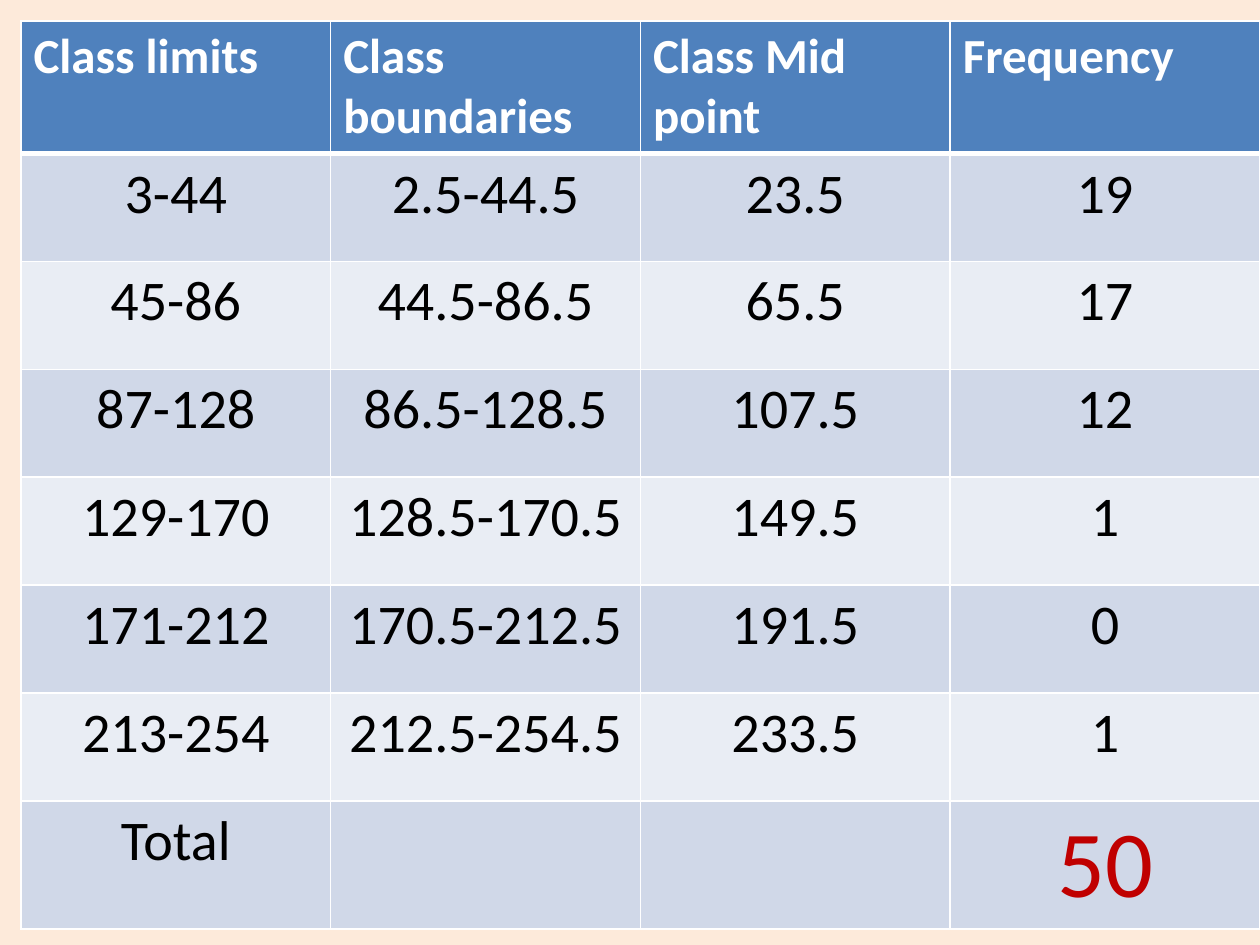
import pptx
import pptx.util
import pptx.dml.color
import pptx.enum.text
import pptx.oxml
import pptx.oxml.ns
from pptx.util import Pt

HEADER = ["Class limits", "Class boundaries", "Class Mid point", "Frequency"]
CLASSES = [
    ["3-44", "2.5-44.5", "23.5", "19"],
    ["45-86", "44.5-86.5", "65.5", "17"],
    ["87-128", "86.5-128.5", "107.5", "12"],
    ["129-170", "128.5-170.5", "149.5", "1"],
    ["171-212", "170.5-212.5", "191.5", "0"],
    ["213-254", "212.5-254.5", "233.5", "1"],
]
TOTAL = ["Total", "", "", "50"]


def rgb(value):
    return pptx.dml.color.RGBColor.from_string(value)


class Deck:
    font = "Calibri"
    white, black, red = "FFFFFF", "000000", "C00000"
    header_fill = "4F81BD"
    bands = ("D0D8E8", "E9EDF4")

    def __init__(self, width, height):
        self.prs = pptx.Presentation()
        self.prs.slide_width, self.prs.slide_height = Pt(width), Pt(height)

    def slide(self, background):
        self.s = self.prs.slides.add_slide(self.prs.slide_layouts[6])
        fill = self.s.background.fill
        fill.solid()
        fill.fore_color.rgb = rgb(background)

    def borders(self, cell, **widths):
        # Border lines come before the fill in the cell properties
        tc_pr = cell._tc.get_or_add_tcPr()
        for i, side in enumerate("LRTB"):
            tc_pr.insert(i, pptx.oxml.parse_xml(
                f'<a:ln{side} {pptx.oxml.ns.nsdecls("a")} w="{Pt(widths.get(side, 1))}">'
                f'<a:solidFill><a:srgbClr val="{self.white}"/></a:solidFill></a:ln{side}>'))

    def text(self, cell, text, size, color, bold, align):
        p = cell.text_frame.paragraphs[0]
        p.alignment = align
        r = p.add_run()
        r.text = text
        r.font.name, r.font.size, r.font.bold = self.font, Pt(size), bold
        r.font.color.rgb = rgb(color)

    def table(self, x, y, col_width, row_heights, rows):
        n_rows, n_cols = len(rows), len(rows[0])
        sp = self.s.shapes.add_table(n_rows, n_cols, Pt(x), Pt(y),
                                     Pt(col_width * n_cols), Pt(sum(row_heights)))
        table = sp.table
        for col in table.columns:
            col.width = Pt(col_width)
        for i, values in enumerate(rows):
            table.rows[i].height = Pt(row_heights[i])
            for j, value in enumerate(values):
                self.cell(table.cell(i, j), value, i, i == n_rows - 1 and j == n_cols - 1)

    def cell(self, cell, value, row, is_sum):
        header = row == 0
        cell.fill.solid()
        cell.fill.fore_color.rgb = rgb(self.header_fill if header else self.bands[(row - 1) % 2])
        self.borders(cell, B=3 if header else 1, T=3 if row == 1 else 1)
        align = pptx.enum.text.PP_ALIGN
        if header:
            self.text(cell, value, 28, self.white, True, align.LEFT)
        elif is_sum:
            self.text(cell, value, 54, self.red, False, align.CENTER)
        elif value:
            self.text(cell, value, 32, self.black, False, align.CENTER)


def main():
    deck = Deck(720, 540)
    deck.slide("FDEADA")

    # Frequency distribution table
    heights = [75.5] + [61.7] * len(CLASSES) + [73]
    deck.table(12, 12, 177, heights, [HEADER] + CLASSES + [TOTAL])

    deck.prs.save("out.pptx")


if __name__ == "__main__":
    main()
